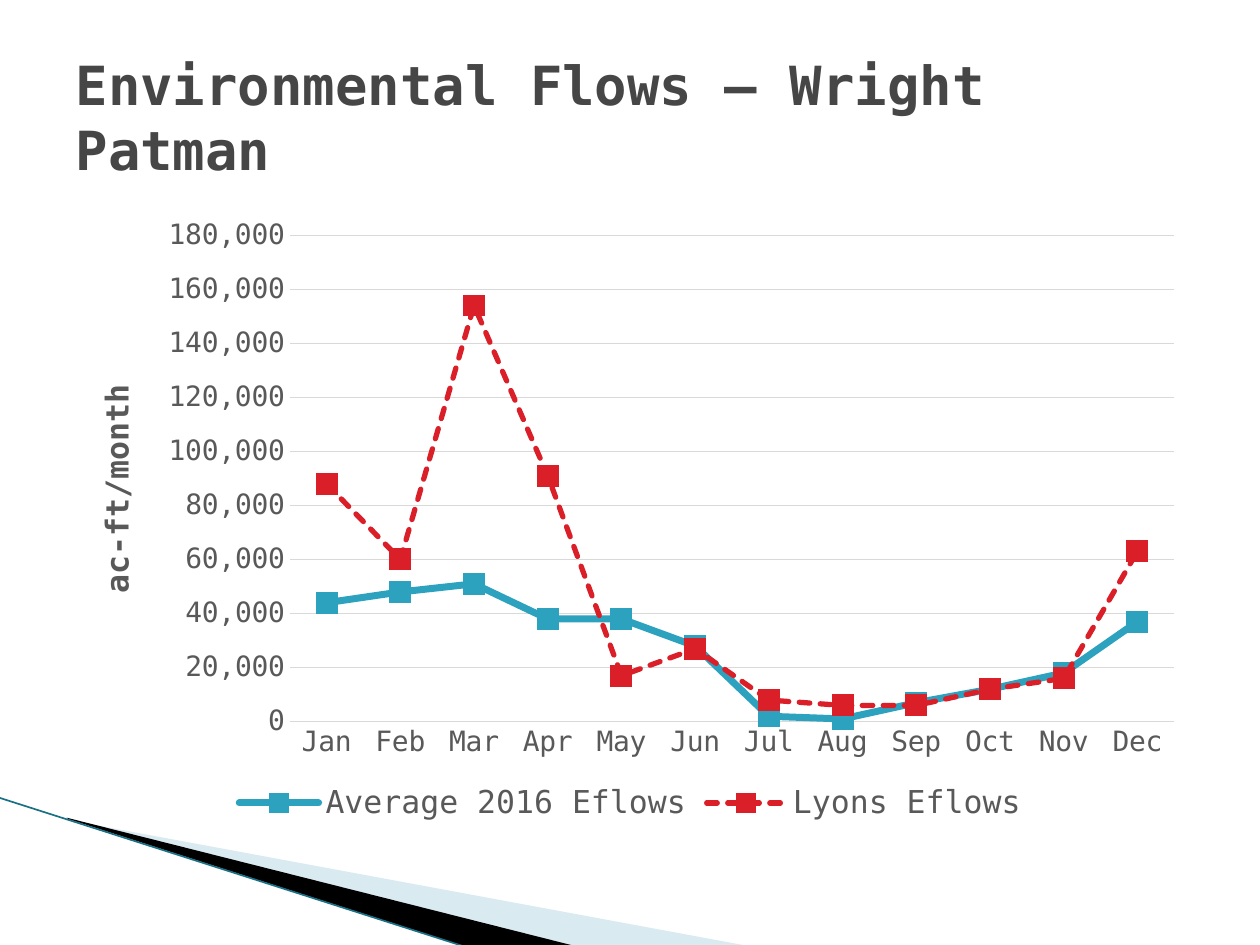
from lxml import etree
from pptx import Presentation
from pptx.chart.data import CategoryChartData
from pptx.dml.color import RGBColor
from pptx.enum.chart import XL_CHART_TYPE, XL_LEGEND_POSITION, XL_MARKER_STYLE, XL_TICK_MARK
from pptx.enum.dml import MSO_LINE
from pptx.enum.shapes import MSO_CONNECTOR
from pptx.enum.text import MSO_ANCHOR, MSO_AUTO_SIZE, PP_ALIGN
from pptx.oxml.ns import qn
from pptx.util import Inches, Pt

LINE_MARKERS = XL_CHART_TYPE.LINE_MARKERS
BOTTOM = XL_LEGEND_POSITION.BOTTOM
SQUARE = XL_MARKER_STYLE.SQUARE
NO_TICK = XL_TICK_MARK.NONE
SOLID, DASHED = MSO_LINE.SOLID, MSO_LINE.SQUARE_DOT
FONT = "DejaVu Sans Mono"
GREY, GRID = "595959", "D9D9D9"


def rgb(color):
    return RGBColor.from_string(color)


def style(font, size, color, bold=False):
    values = {"name": FONT, "size": Pt(size), "bold": bold}
    for key, value in values.items():
        setattr(font, key, value)
    font.color.rgb = rgb(color)


prs = Presentation()
prs.slide_width, prs.slide_height = Inches(10), Inches(7.5)
slide = prs.slides.add_slide(prs.slide_layouts[5])

# Corner wedges: outline, colour, opacity in percent
wedges = [
    ([(0.55, 6.51), (5.95, 7.51), (4.56, 7.51), (0.55, 6.5)], "A0CBDC", 40),
    ([(0.53, 6.49), (4.57, 7.51), (3.72, 7.52), (0.54, 6.5)], "000000", 100),
]
for points, color, opacity in wedges:
    corners = [(Inches(x), Inches(y)) for x, y in points]
    builder = slide.shapes.build_freeform(*corners[0])
    builder.add_line_segments(corners[1:])
    wedge = builder.convert_to_shape()
    wedge.shadow.inherit = False
    wedge.fill.solid()
    wedge.fill.fore_color.rgb = rgb(color)
    wedge.line.fill.background()
    if opacity < 100:
        fill_color = wedge.element.spPr.find(f".//{qn('a:srgbClr')}")
        etree.SubElement(fill_color, qn("a:alpha"), val=str(opacity * 1000))

edge = slide.shapes.add_connector(
    MSO_CONNECTOR.STRAIGHT, Inches(-0.01), Inches(6.33), Inches(3.71), Inches(7.52))
edge.line.color.rgb = rgb("1B7085")
edge.line.width = Pt(0.95)
etree.SubElement(edge.element.spPr, qn("a:effectLst"))

title = slide.shapes.title
title.left, title.top, title.width, title.height = map(Inches, (0.5, 0.3, 9, 1.25))
title_frame = title.text_frame
title_frame.text = "Environmental Flows – Wright Patman"
title_frame.word_wrap = True
title_frame.auto_size = MSO_AUTO_SIZE.NONE
title_frame.vertical_anchor = MSO_ANCHOR.MIDDLE
title_frame.paragraphs[0].alignment = PP_ALIGN.LEFT
style(title_frame.paragraphs[0].runs[0].font, 30.8, "464646", bold=True)

# Monthly flows: name, values in thousands of ac-ft, colour, line width, dash
flows = [
    ("Average 2016 Eflows", [44, 48, 51, 38, 38, 28, 2, 1, 7, 12, 18, 37],
     "2DA2BF", 4, SOLID),
    ("Lyons Eflows", [88, 60, 154, 91, 17, 27, 8, 6, 6, 12, 16, 63],
     "DA1F28", 3, DASHED),
]
data = CategoryChartData(number_format="#,##0")
data.categories = "Jan Feb Mar Apr May Jun Jul Aug Sep Oct Nov Dec".split()
for name, thousands, *_ in flows:
    data.add_series(name, [value * 1000 for value in thousands])
chart = slide.shapes.add_chart(
    LINE_MARKERS, Inches(0.5), Inches(1.62), Inches(9), Inches(4.95), data).chart
style(chart.font, 10, "000000")
chart.has_title = False
chart.has_legend = True
chart.legend.position = BOTTOM
chart.legend.include_in_layout = False
style(chart.legend.font, 18, GREY)

months, volume = chart.category_axis, chart.value_axis
for axis in (months, volume):
    axis.major_tick_mark = axis.minor_tick_mark = NO_TICK
    style(axis.tick_labels.font, 16, GREY)
volume.has_major_gridlines = True
for line in (months.format.line, volume.major_gridlines.format.line):
    line.color.rgb = rgb(GRID)
    line.width = Pt(0.75)
volume.format.line.fill.background()
volume.minimum_scale, volume.maximum_scale, volume.major_unit = 0, 180000, 20000
volume.tick_labels.number_format = "#,##0"
volume.tick_labels.number_format_is_linked = False
volume.axis_title.text_frame.text = "ac-ft/month"
style(volume.axis_title.text_frame.paragraphs[0].runs[0].font, 18, GREY, bold=True)
for body in chart.element.xpath(".//c:valAx/c:title//a:bodyPr"):
    body.set("rot", "-5400000")
    body.set("vert", "horz")

chart.plots[0].vary_by_categories = False
for series, (_, _, color, width, dash) in zip(chart.plots[0].series, flows):
    series.smooth = False
    series.format.line.color.rgb = rgb(color)
    series.format.line.width = Pt(width)
    series.format.line.dash_style = dash
    series.marker.style = SQUARE
    series.marker.size = 12
    series.marker.format.fill.solid()
    series.marker.format.fill.fore_color.rgb = rgb(color)
    series.marker.format.line.color.rgb = rgb(color)
for outline in chart.element.xpath(".//c:ser/c:spPr/a:ln"):
    outline.set("cap", "rnd")

# Fixed inner plot area, as fractions of the chart
plot_area = chart.element.xpath(".//c:plotArea")[0]
for automatic in plot_area.findall(qn("c:layout")):
    plot_area.remove(automatic)
layout = etree.Element(qn("c:layout"))
plot_area.insert(0, layout)
manual = etree.SubElement(layout, qn("c:manualLayout"))
placement = {"layoutTarget": "inner", "xMode": "edge", "yMode": "edge",
             "x": "0.2", "y": "0.05", "w": "0.78", "h": "0.78"}
for tag, value in placement.items():
    etree.SubElement(manual, qn(f"c:{tag}"), val=value)

prs.save("out.pptx")
